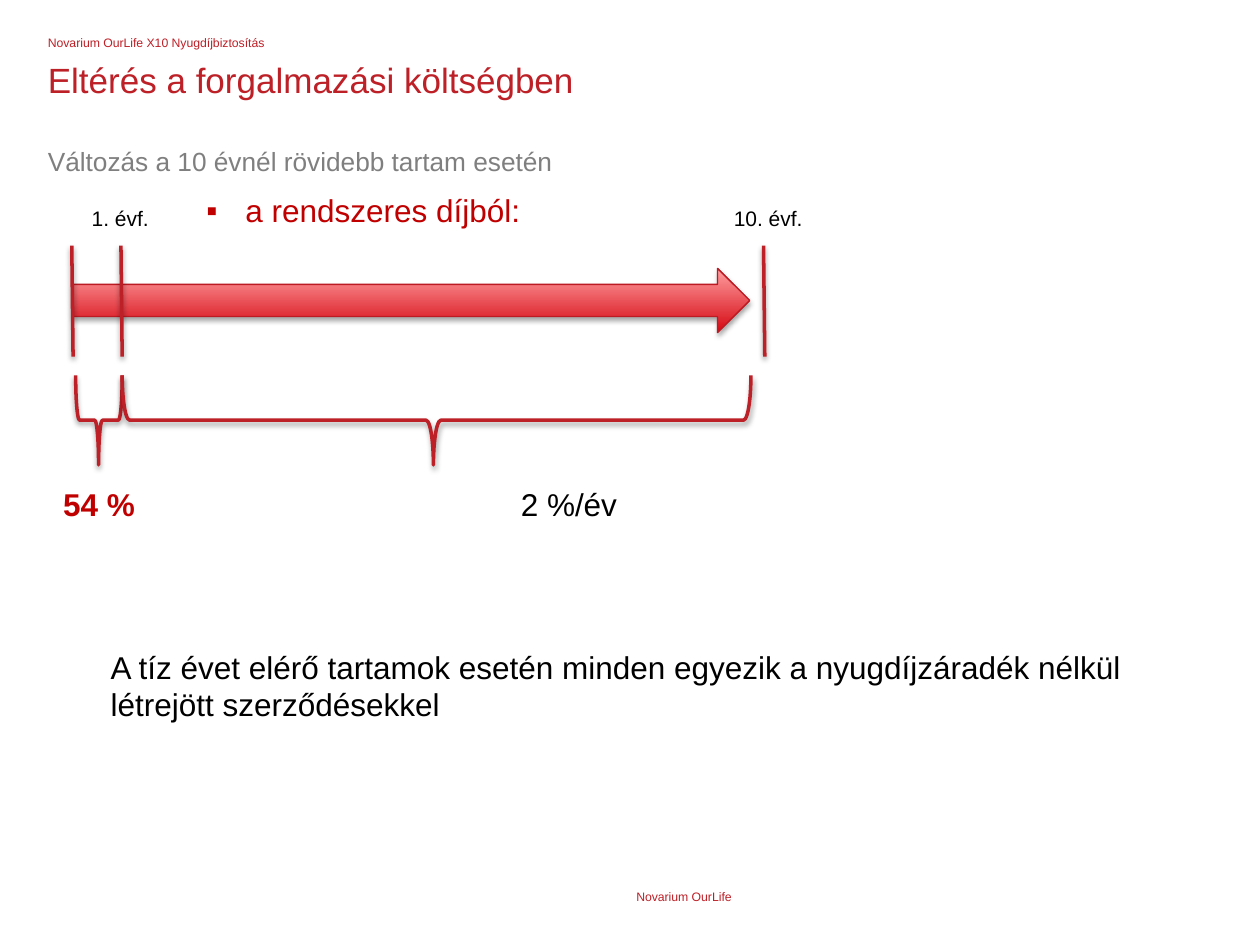
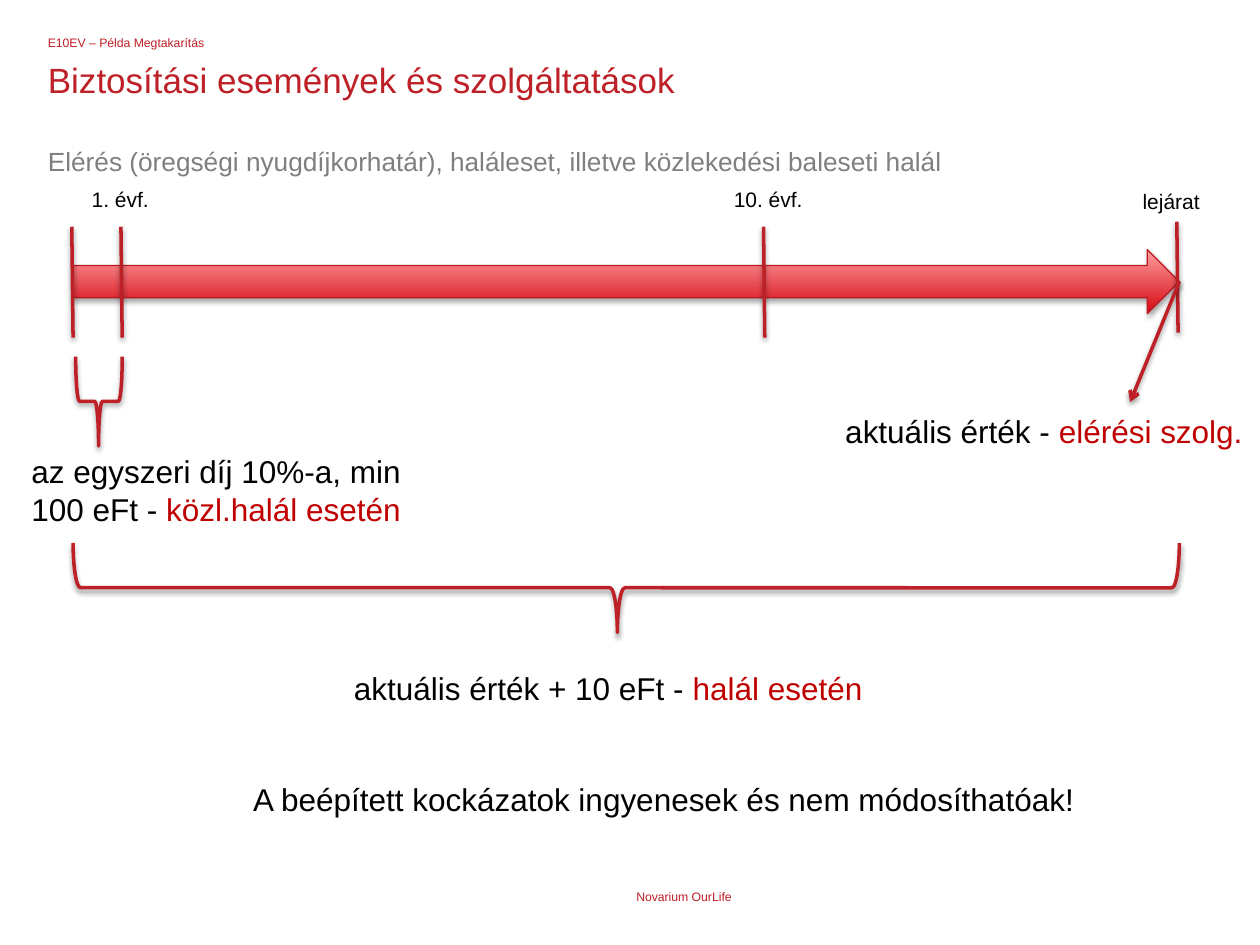
from lxml.etree import SubElement
from pptx import Presentation
from pptx.dml.color import RGBColor
from pptx.enum.shapes import MSO_CONNECTOR as Connector, MSO_SHAPE as Preset
from pptx.enum.text import MSO_AUTO_SIZE as AutoSize, PP_ALIGN as Align
from pptx.oxml.ns import qn
from pptx.util import Inches, Pt

# Shared look
BRAND_RED = RGBColor(0xBD, 0x20, 0x27)
ARROW_EDGE = RGBColor(0xBD, 0x1B, 0x23)
ARROW_DARK = RGBColor(0xD5, 0x08, 0x12)
ARROW_LIGHT = RGBColor(0xFF, 0x9F, 0xA1)
ACCENT = RGBColor(0xC0, 0x00, 0x00)
GREY = RGBColor(0x7F, 0x7F, 0x7F)
BLACK = RGBColor(0, 0, 0)
FONT = "Arial"
FOOTER = "Novarium OurLife"
MARGIN, CONTENT_WIDTH = 0.38, 9.17

# Timeline geometry in inches; drops are measured from the top of the labels
START, YEAR_1, YEAR_10, EXPIRY = 0.57, 0.96, 6.06, 9.34
TICK_DROP, TICK_HEIGHT, TICK_LEAN = 0.37, 0.88, 0.01
ARROW_LEFT, ARROW_DROP, ARROW_HEIGHT = 0.58, 0.55, 0.51
BRACE_DROP, BRACE_HEIGHT = 1.4, 0.71
LABEL_HEIGHT, BODY_HEIGHT, TWO_LINES = 0.3, 0.4, 0.71

# Content: ticks are (x, lift), labels (text, centre, width, lift),
# braces (left, right, drop, point), notes (text, left, top, width, height, format)
SLIDES = [
    dict(
        product="Novarium OurLife X10 Nyugdíjbiztosítás",
        title="Eltérés a forgalmazási költségben",
        subtitle="Változás a 10 évnél rövidebb tartam esetén",
        timeline_top=1.58,
        arrow_end=5.95,
        ticks=[(START, 0), (YEAR_1, 0), (YEAR_10, 0)],
        labels=[("1. évf.", 0.96, 0.66, 0), ("10. évf.", 6.1, 0.75, 0)],
        braces=[(0.6, 0.97, BRACE_DROP, 0.508), (0.97, 5.96, BRACE_DROP, 0.505)],
        notes=[
            ("54 %", -0.24, 3.8, 2.05, BODY_HEIGHT,
             dict(color=ACCENT, bold=True, align=Align.CENTER)),
            ("2 %/év", 3.49, 3.8, 2.05, BODY_HEIGHT, dict(align=Align.CENTER)),
            ("a rendszeres díjból:", 1.54, 1.47, 3.4, BODY_HEIGHT,
             dict(color=ACCENT, bullet="▪")),
            ("A tíz évet elérő tartamok esetén minden egyezik a nyugdíjzáradék "
             "nélkül létrejött szerződésekkel", 0.78, 5.09, 8.56, TWO_LINES, {}),
        ],
    ),
    dict(
        product="E10EV – Példa Megtakarítás",
        title="Biztosítási események és szolgáltatások",
        subtitle="Elérés (öregségi nyugdíjkorhatár), haláleset, "
                 "illetve közlekedési baleseti halál",
        timeline_top=1.43,
        arrow_end=9.36,
        ticks=[(START, 0), (YEAR_1, 0), (YEAR_10, 0), (EXPIRY, 0.04)],
        labels=[("1. évf.", 0.96, 0.66, 0), ("10. évf.", 6.1, 0.75, 0),
                ("lejárat", 9.3, 0.66, -0.02)],
        braces=[(0.6, 0.97, BRACE_DROP, 0.508), (0.58, 9.36, 2.88, 0.508)],
        payout_point=(8.97, 3.19),
        notes=[
            ([("aktuális érték + 10 eFt - ", BLACK), ("halál esetén", ACCENT)],
             2.71, 5.26, 4.28, BODY_HEIGHT, dict(wrap=False)),
            ([("az egyszeri díj 10%-a, min 100 eFt - ", BLACK),
              ("közl.halál esetén", ACCENT)],
             0.09, 3.54, 3.25, TWO_LINES, dict(align=Align.CENTER)),
            ([("aktuális érték - ", BLACK), ("elérési szolg.", ACCENT)],
             6.61, 3.22, 3.39, BODY_HEIGHT, dict(wrap=False)),
            ("A beépített kockázatok ingyenesek és nem módosíthatóak!",
             1.91, 6.14, 6.78, BODY_HEIGHT, dict(wrap=False)),
        ],
    ),
]


def write(slide, text, left, top, width, height, size=18, color=BLACK, bold=False,
          align=None, spacing=None, bullet=None, wrap=True, inset=True):
    """Text is a string, or a list of (words, colour) runs."""
    box = slide.shapes.add_textbox(*map(Inches, (left, top, width, height)))
    frame = box.text_frame
    frame.word_wrap = wrap
    if inset:
        frame.auto_size = AutoSize.SHAPE_TO_FIT_TEXT
    else:
        frame.margin_left = frame.margin_right = 0
        frame.margin_top = frame.margin_bottom = 0
    paragraph = frame.paragraphs[0]
    if align is not None:
        paragraph.alignment = align
    if spacing:
        paragraph.line_spacing = Pt(spacing)
    if bullet:
        properties = paragraph._p.get_or_add_pPr()
        properties.set("marL", str(Inches(0.31)))
        properties.set("indent", str(-Inches(0.31)))
        SubElement(properties, qn("a:buFont"), typeface=FONT)
        SubElement(properties, qn("a:buChar"), char=bullet)
    for words, run_color in [(text, color)] if isinstance(text, str) else text:
        run = paragraph.add_run()
        run.text = words
        run.font.name, run.font.size, run.font.bold = FONT, Pt(size), bold
        run.font.color.rgb = run_color


def outline(part, color=BRAND_RED, width=2, opacity=38, distance=1.6):
    """Set the line and a soft shadow falling straight down."""
    part.line.color.rgb = color
    part.line.width = Pt(width)
    effects = SubElement(part._element.spPr, qn("a:effectLst"))
    shadow = SubElement(effects, qn("a:outerShdw"), blurRad=str(Pt(3.1)),
                        dist=str(Pt(distance)), dir="5400000", rotWithShape="0")
    black = SubElement(shadow, qn("a:srgbClr"), val="000000")
    SubElement(black, qn("a:alpha"), val=str(opacity * 1000))


def add_line(slide, *ends):
    line = slide.shapes.add_connector(Connector.STRAIGHT, *map(Inches, ends))
    outline(line)
    return line


def add_time_arrow(slide, top, right):
    arrow = slide.shapes.add_shape(Preset.RIGHT_ARROW, *map(
        Inches, (ARROW_LEFT, top, right - ARROW_LEFT, ARROW_HEIGHT)))
    arrow.fill.gradient()
    arrow.fill.gradient_angle = 90
    for stop, color in zip(arrow.fill.gradient_stops, (ARROW_DARK, ARROW_LIGHT)):
        stop.color.rgb = color
    outline(arrow, ARROW_EDGE, 0.75, opacity=35, distance=1.8)
    return arrow


def add_brace(slide, left, right, top, point):
    """A right brace turned by 90 degrees, so its frame is centred on the span."""
    span = right - left
    brace = slide.shapes.add_shape(Preset.RIGHT_BRACE, *map(Inches, (
        (left + right - BRACE_HEIGHT) / 2, top + (BRACE_HEIGHT - span) / 2,
        BRACE_HEIGHT, span)))
    brace.rotation = 90
    brace.adjustments[0], brace.adjustments[1] = 0.083, point
    brace.fill.background()
    outline(brace)


def add_frame(slide, content):
    """Footer, title, subtitle and product line."""
    write(slide, FOOTER, 5.05, 7.06, 3.17, 0.12, size=7, color=BRAND_RED, inset=False)
    for key, top, height, size, spacing, color in [
            ("title", 0.49, 0.61, 20, 22, BRAND_RED),
            ("subtitle", 1.17, 0.5, 15, 17, GREY),
            ("product", 0.3, 0.13, 7, 7, BRAND_RED)]:
        write(slide, content[key], MARGIN, top, CONTENT_WIDTH, height,
              size=size, spacing=spacing, color=color, inset=False)


def add_timeline(slide, content):
    top = content["timeline_top"]
    arrow = add_time_arrow(slide, top + ARROW_DROP, content["arrow_end"])
    for x, lift in content["ticks"]:
        tick_top = top + TICK_DROP - lift
        add_line(slide, x, tick_top, x + TICK_LEAN, tick_top + TICK_HEIGHT)
    for text, centre, width, lift in content["labels"]:
        write(slide, text, centre - width / 2, top - lift, width, LABEL_HEIGHT,
              size=12, wrap=False)
    for left, right, drop, point in content["braces"]:
        add_brace(slide, left, right, top + drop, point)
    if "payout_point" in content:
        tip = content["arrow_end"], top + ARROW_DROP + ARROW_HEIGHT / 2
        payout = add_line(slide, *tip, *content["payout_point"])
        payout.begin_connect(arrow, 3)
        SubElement(payout.line._get_or_add_ln(), qn("a:tailEnd"), type="arrow")


def main():
    deck = Presentation()
    deck.slide_width, deck.slide_height = Inches(10), Inches(7.5)
    for content in SLIDES:
        slide = deck.slides.add_slide(deck.slide_layouts[6])
        add_frame(slide, content)
        add_timeline(slide, content)
        for *placed_text, style in content["notes"]:
            write(slide, *placed_text, **style)
    deck.save("out.pptx")


if __name__ == "__main__":
    main()
